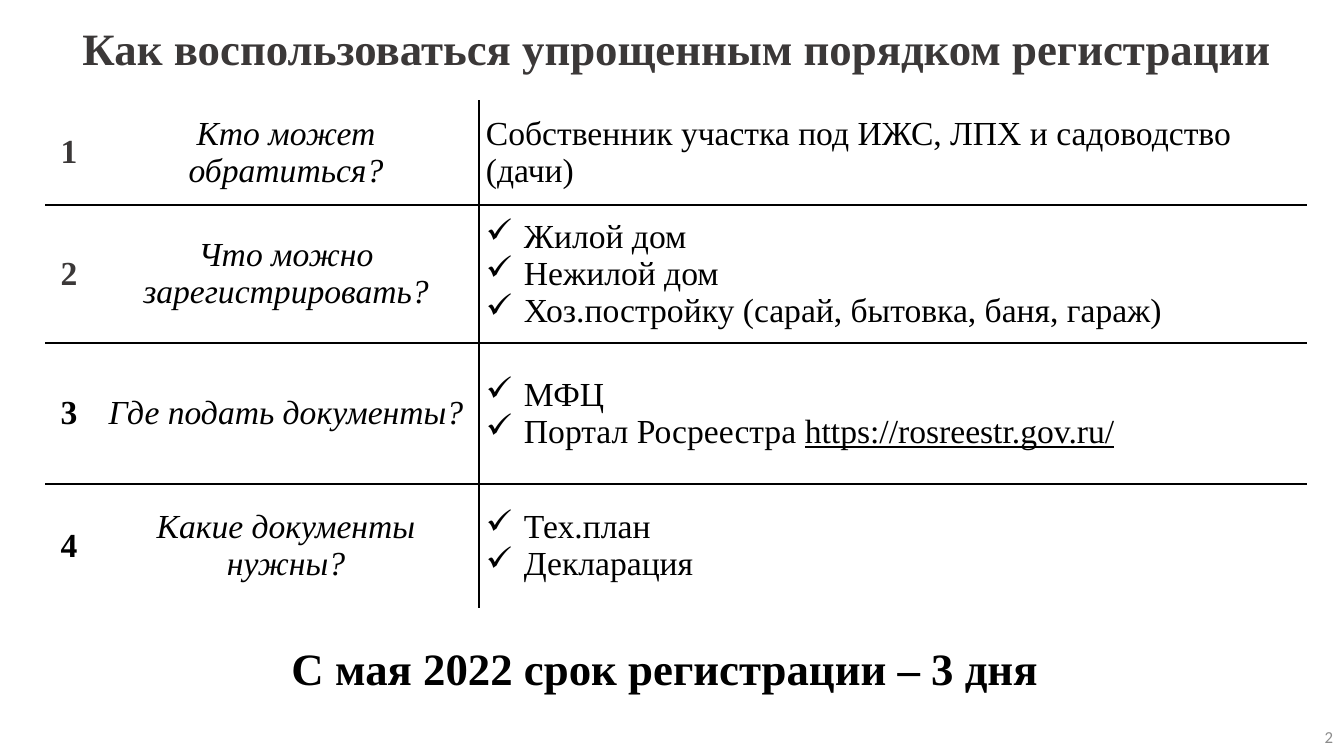
from dataclasses import dataclass

from lxml.etree import SubElement
from pptx import Presentation
from pptx.dml.color import RGBColor
from pptx.enum.text import MSO_ANCHOR as Anchor, PP_ALIGN as Align
from pptx.oxml.ns import qn
from pptx.util import Pt

SLIDE_WIDTH, SLIDE_HEIGHT = 1344, 756
EMU_PER_PX = 12192000 / SLIDE_WIDTH


@dataclass(frozen=True)
class Theme:
    """Colours, fonts and type sizes of the slide."""
    ink: str = "000000"
    heading: str = "3B3838"
    muted: str = "8C8C8C"
    serif: str = "Times New Roman"
    sans: str = "Calibri"
    large: int = 32
    body: int = 24
    small: int = 12


THEME = Theme()
COLUMNS = (48, 386, 828)
ROW_HEIGHTS = (105, 138, 141, 124)
PORTAL = "https://rosreestr.gov.ru/"
STEPS = (
    ("Кто может обратиться?", THEME.heading, False,
     ("Собственник участка под ИЖС, ЛПХ и садоводство (дачи)",)),
    ("Что можно зарегистрировать?", THEME.heading, True,
     ("Жилой дом", "Нежилой дом", "Хоз.постройку (сарай, бытовка, баня, гараж)")),
    ("Где подать документы?", THEME.ink, True, ("МФЦ", "Портал Росреестра " + PORTAL)),
    ("Какие документы нужны?", THEME.ink, True, ("Тех.план", "Декларация")),
)


def px(length):
    """Turn pixels into EMU."""
    return round(length * EMU_PER_PX)


def write(paragraph, text, color=THEME.ink, size=THEME.body, face=THEME.serif, **styles):
    """Add a run with the given format values."""
    run = paragraph.add_run()
    run.text = text
    run.font.color.rgb = RGBColor.from_string(color)
    for key, value in {"name": face, "size": Pt(size), "bold": False, **styles}.items():
        setattr(run.font, key, value)


def add_line(slide, box, text, align, anchor, **styles):
    """Place one paragraph of text in a box and return the paragraph."""
    frame = slide.shapes.add_textbox(*map(px, box)).text_frame
    frame.word_wrap = True
    frame.vertical_anchor = anchor
    paragraph = frame.paragraphs[0]
    paragraph.alignment = align
    write(paragraph, text, **styles)
    return paragraph


def add_title(slide, box):
    """Place the slide heading."""
    heading = add_line(slide, box, "Как воспользоваться упрощенным порядком регистрации",
                       Align.CENTER, Anchor.MIDDLE, color=THEME.heading,
                       size=THEME.large, bold=True)
    heading.line_spacing = 1.07
    heading.space_after = Pt(8)


def add_check(paragraph):
    """Give a paragraph a hanging check mark."""
    properties = paragraph._p.get_or_add_pPr()
    properties.set("marL", str(px(38)))
    properties.set("indent", str(-px(38)))
    SubElement(properties, qn("a:buChar"), char="✓")


def set_borders(cell, visible):
    """Draw the visible sides of a cell and clear the others."""
    properties = cell._tc.get_or_add_tcPr()
    for side in "LRTB":
        edge = SubElement(properties, qn("a:ln" + side), w=str(Pt(1)))
        if side in visible:
            fill = SubElement(edge, qn("a:solidFill"))
            SubElement(fill, qn("a:srgbClr"), val=THEME.ink)
        else:
            SubElement(edge, qn("a:noFill"))


def format_cell(cell, row, column):
    """Set margins, anchor, inner rules and empty fill of a cell."""
    margins = {"margin_left": px(7), "margin_right": px(7),
               "margin_top": px(4), "margin_bottom": px(4)}
    for key, value in {**margins, "vertical_anchor": Anchor.MIDDLE}.items():
        setattr(cell, key, value)
    sides = ("", "R", "L")[column]
    sides += "T" if row > 0 else ""
    sides += "B" if row < len(STEPS) - 1 else ""
    set_borders(cell, sides)
    cell.fill.background()


def add_answers(cell, answers, checked):
    """Write the answers of a step, underlining the portal address."""
    frame = cell.text_frame
    for index, answer in enumerate(answers):
        paragraph = frame.add_paragraph() if index else frame.paragraphs[0]
        lead, address, _ = answer.partition(PORTAL)
        write(paragraph, lead)
        if address:
            write(paragraph, address, underline=True)
        if checked:
            add_check(paragraph)


def add_steps(slide, left, top):
    """Place the table of numbered questions and answers."""
    steps = slide.shapes.add_table(
        len(STEPS), len(COLUMNS), px(left), px(top),
        px(sum(COLUMNS)), px(sum(ROW_HEIGHTS))).table
    steps.first_row = steps.horz_banding = False
    for column, width in zip(steps.columns, COLUMNS):
        column.width = px(width)
    for row, (question, number_color, checked, answers) in enumerate(STEPS):
        steps.rows[row].height = px(ROW_HEIGHTS[row])
        cells = [steps.cell(row, column) for column in range(len(COLUMNS))]
        for column, cell in enumerate(cells):
            format_cell(cell, row, column)
        number, prompt = (cell.text_frame.paragraphs[0] for cell in cells[:2])
        number.alignment = prompt.alignment = Align.CENTER
        write(number, str(row + 1), color=number_color, bold=True)
        write(prompt, question, italic=True)
        add_answers(cells[2], answers, checked)


def add_footer(slide, deadline_box, number_box):
    """Place the deadline and the slide number."""
    add_line(slide, number_box, "2", Align.RIGHT, Anchor.MIDDLE,
             color=THEME.muted, size=THEME.small, face=THEME.sans)
    add_line(slide, deadline_box, "С мая 2022 срок регистрации – 3 дня ",
             Align.CENTER, Anchor.TOP, size=THEME.large, bold=True)


def main():
    """Build and save the slide."""
    deck = Presentation()
    deck.slide_width, deck.slide_height = px(SLIDE_WIDTH), px(SLIDE_HEIGHT)
    slide = deck.slides.add_slide(deck.slide_layouts[6])
    add_title(slide, (5, 27, 1344, 38))
    add_steps(slide, 45, 100)
    add_footer(slide, (45, 636, 1251, 112), (1041, 717, 302, 40))
    deck.save("out.pptx")


if __name__ == "__main__":
    main()
